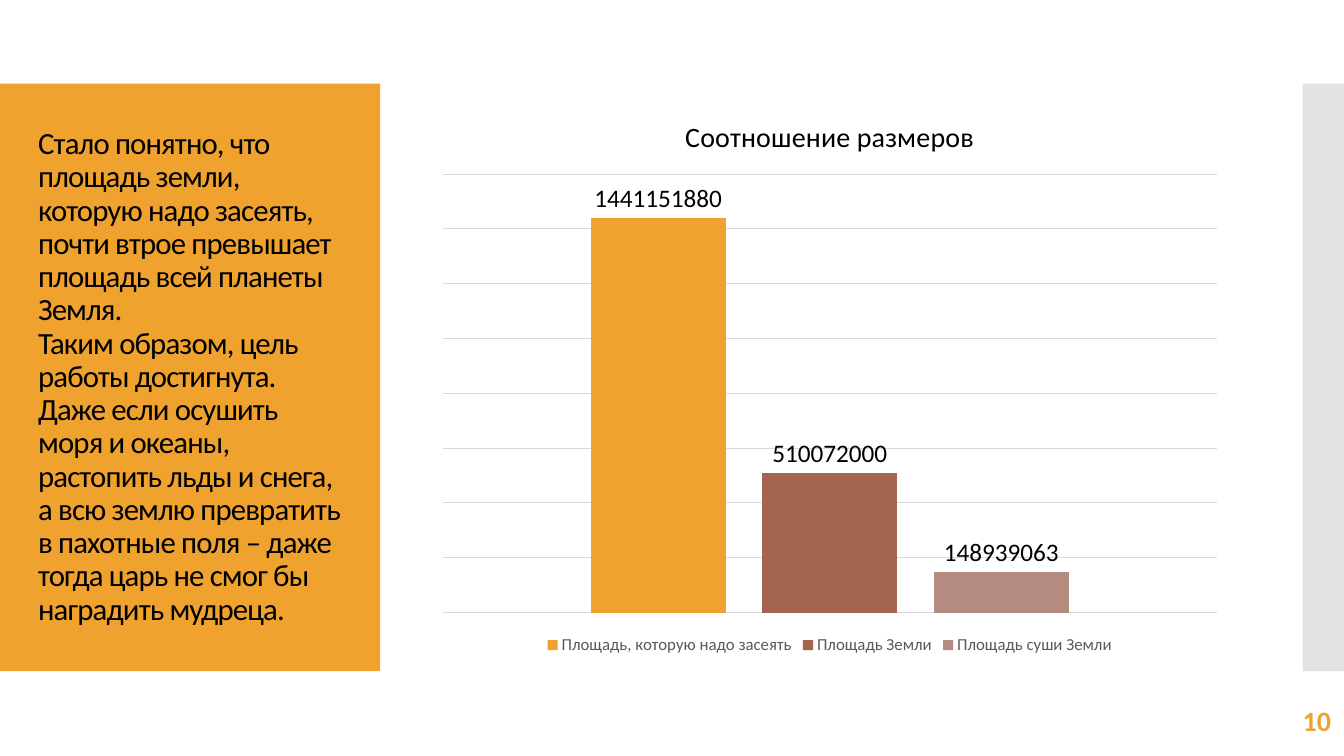
from dataclasses import dataclass

from lxml.etree import SubElement
from pptx import Presentation
from pptx.chart.data import CategoryChartData
from pptx.dml.color import RGBColor
from pptx.enum.chart import XL_CHART_TYPE, XL_LABEL_POSITION, XL_LEGEND_POSITION
from pptx.enum.shapes import MSO_SHAPE
from pptx.enum.text import MSO_ANCHOR, PP_ALIGN
from pptx.oxml.ns import qn
from pptx.util import Inches, Pt


@dataclass(frozen=True)
class Theme:
    font: str = "Calibri"
    orange: str = "F0A22E"
    brown: str = "A5644E"
    rose: str = "B58B80"
    side_gray: str = "C8C8C8"
    grid_gray: str = "D9D9D9"
    legend_gray: str = "595959"
    black: str = "000000"
    conclusion_size: int = 22
    heading_size: int = 20
    label_size: int = 18
    legend_size: int = 12
    chart_size: int = 10


THEME = Theme()
BAND_TOP = 0.83
BAND_HEIGHT = 5.83
CONCLUSION = (
    "Стало понятно, что площадь земли, которую надо засеять, почти втрое "
    "превышает площадь всей планеты Земля.\v"
    "Таким образом, цель работы достигнута. Даже если осушить моря и океаны, "
    "растопить льды и снега, а всю землю превратить в пахотные поля – даже "
    "тогда царь не смог бы наградить мудреца."
)
AREAS = [
    ("Площадь, которую надо засеять", 1441151880, THEME.orange),
    ("Площадь Земли", 510072000, THEME.brown),
    ("Площадь суши Земли", 148939063, THEME.rose),
]


def style_font(font, size, color, bold=False):
    font.name = THEME.font
    font.size = Pt(size)
    font.bold = bold
    font.color.rgb = RGBColor.from_string(color)


def add_band(slide, left, width, color, opacity=100):
    band = slide.shapes.add_shape(
        MSO_SHAPE.RECTANGLE, Inches(left), Inches(BAND_TOP), Inches(width), Inches(BAND_HEIGHT)
    )
    band.shadow.inherit = False
    band.line.fill.background()
    band.fill.solid()
    band.fill.fore_color.rgb = RGBColor.from_string(color)
    if opacity < 100:
        color_element = band.fill._xPr.find(".//" + qn("a:srgbClr"))
        SubElement(color_element, qn("a:alpha"), val=str(opacity * 1000))


def add_text(slide, box, text, size, color, bold=False, align=PP_ALIGN.LEFT,
             line_spacing=1.0, tracking=0):
    textbox = slide.shapes.add_textbox(*map(Inches, box))
    text_frame = textbox.text_frame
    text_frame.word_wrap = True
    text_frame.vertical_anchor = MSO_ANCHOR.MIDDLE
    paragraph = text_frame.paragraphs[0]
    paragraph.text = text
    paragraph.alignment = align
    paragraph.line_spacing = line_spacing
    for run in paragraph.runs:
        style_font(run.font, size, color, bold)
        if tracking:
            run._r.get_or_add_rPr().set("spc", str(round(tracking * 100)))


def add_area_chart(slide, box, title, areas):
    chart_data = CategoryChartData()
    chart_data.categories = ["1"]
    for name, area, _ in areas:
        chart_data.add_series(name, [area])
    chart = slide.shapes.add_chart(
        XL_CHART_TYPE.COLUMN_CLUSTERED, *map(Inches, box), chart_data
    ).chart
    style_font(chart.font, THEME.chart_size, THEME.black)

    chart.has_title = True
    chart.chart_title.include_in_layout = False
    paragraph = chart.chart_title.text_frame.paragraphs[0]
    paragraph.text = title
    style_font(paragraph.runs[0].font, THEME.heading_size, THEME.black)

    chart.has_legend = True
    chart.legend.position = XL_LEGEND_POSITION.BOTTOM
    chart.legend.include_in_layout = False
    style_font(chart.legend.font, THEME.legend_size, THEME.legend_gray)

    chart.category_axis.visible = False
    value_axis = chart.value_axis
    value_axis.visible = False
    value_axis.minimum_scale = 0
    value_axis.maximum_scale = 1_600_000_000
    value_axis.major_unit = 200_000_000
    value_axis.has_major_gridlines = True
    grid_line = value_axis.major_gridlines.format.line
    grid_line.width = Pt(0.75)
    grid_line.color.rgb = RGBColor.from_string(THEME.grid_gray)

    plot = chart.plots[0]
    plot.vary_by_categories = False
    plot.gap_width = 219
    plot.overlap = -27
    for series, (_, _, color) in zip(plot.series, areas):
        series.format.fill.solid()
        series.format.fill.fore_color.rgb = RGBColor.from_string(color)
        labels = series.data_labels
        labels.show_value = True
        labels.position = XL_LABEL_POSITION.OUTSIDE_END
        style_font(labels.font, THEME.label_size, THEME.black)


def main():
    presentation = Presentation()
    presentation.slide_width = Inches(13.33)
    presentation.slide_height = Inches(7.5)
    slide = presentation.slides.add_slide(presentation.slide_layouts[6])

    add_band(slide, 0, 3.77, THEME.orange)
    add_band(slide, 12.92, 0.41, THEME.side_gray, opacity=50)
    add_text(slide, (0.28, 1.23, 3.22, 5.03), CONCLUSION, THEME.conclusion_size,
             THEME.black, line_spacing=0.9, tracking=-0.6)
    add_area_chart(slide, (4.23, 0.94, 8, 5.6), "Соотношение размеров", AREAS)
    add_text(slide, (11.63, 6.95, 1.67, 0.4), "10", THEME.heading_size,
             THEME.orange, bold=True, align=PP_ALIGN.RIGHT)

    presentation.save("out.pptx")


if __name__ == "__main__":
    main()
